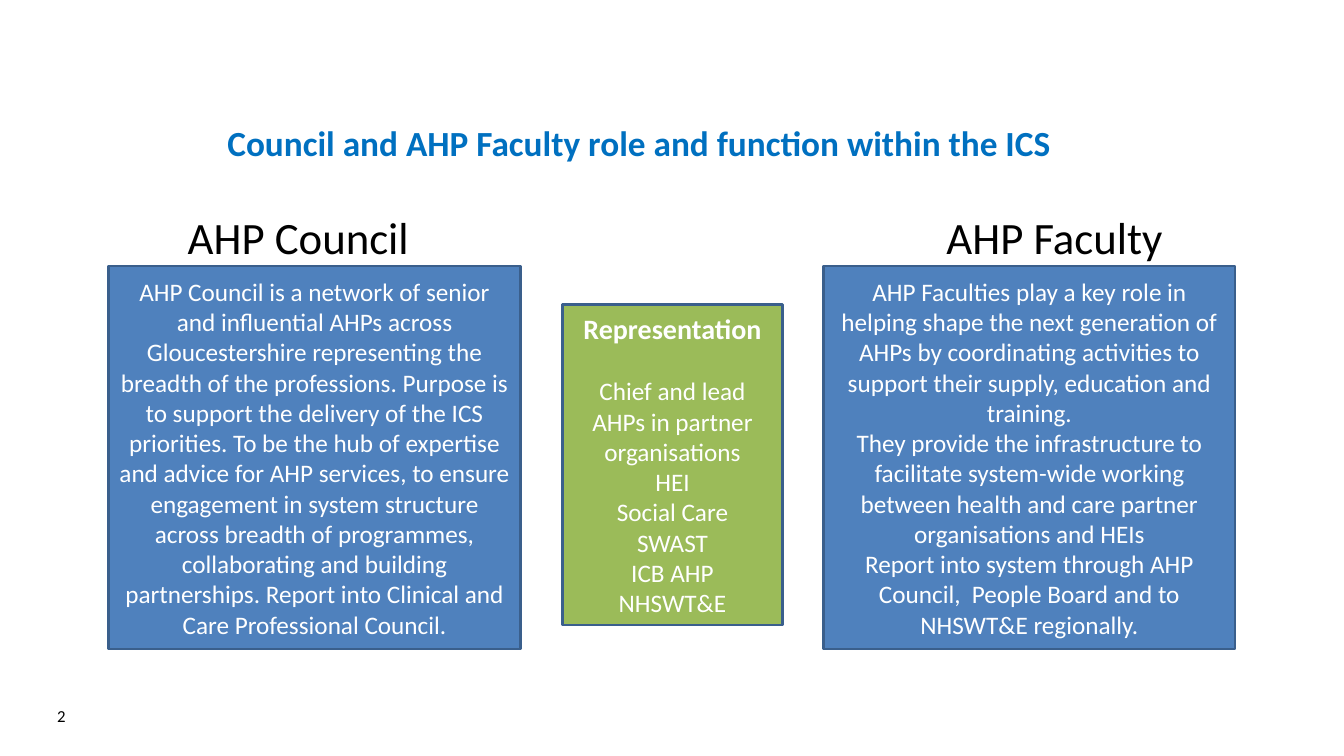
"""Build the slide on the roles of the AHP Council and the AHP Faculty."""
from pptx import Presentation
from pptx import util as u
from pptx.dml import color
from pptx.enum import shapes, text

COLOURS = {"title": "0070C0", "ink": "000000", "white": "FFFFFF",
           "blue": "4F81BD", "green": "9BBB59", "outline": "3A5F8C"}
FONT = "Calibri"
TITLE = "Council and AHP Faculty role and function within the ICS"
HEADINGS = [("AHP Council", 2.96), ("AHP Faculty", 10.46)]
HEADING_WIDTH = 4.08
COUNCIL = [
    "AHP Council is a network of senior and influential AHPs across Gloucestershire "
    "representing the breadth of the professions. Purpose is to support the delivery of "
    "the ICS priorities. To be the hub of expertise and advice for AHP services, to ensure "
    "engagement in system structure across breadth of programmes, collaborating and "
    "building partnerships. Report into Clinical and Care Professional Council.",
]
FACULTY = [
    "AHP Faculties play a key role in helping shape the next generation of AHPs by "
    "coordinating activities to support their supply, education and training.",
    "They provide the infrastructure to facilitate system-wide working between health "
    "and care partner organisations and HEIs",
    "Report into system through AHP Council,  People Board and to NHSWT&E regionally.",
]
REPRESENTATION = ["Representation", "Chief and lead AHPs in partner organisations", "HEI",
                  "Social Care", "SWAST", "ICB AHP", "NHSWT&E"]
PANELS = [
    ((1.08, 2.64, 4.08, 3.8), "blue", COUNCIL),
    ((8.17, 2.64, 4.08, 3.8), "blue", FACULTY),
    ((5.58, 3.02, 2.18, 3.18), "green", REPRESENTATION),
]


def place(shape, left, top, width, height):
    shape.left, shape.top = u.Inches(left), u.Inches(top)
    shape.width, shape.height = u.Inches(width), u.Inches(height)


def style(para, size, colour, align, bold=False):
    para.alignment = align
    para.space_before = u.Pt(0)
    for span in para.runs:
        span.font.name = FONT
        span.font.size = u.Pt(size)
        span.font.bold = bold
        span.font.color.rgb = color.RGBColor.from_string(COLOURS[colour])


def add_title(page):
    box = page.shapes.title
    place(box, 0.68, 1.31, 11.32, 0.64)
    frame = box.text_frame
    frame.text = TITLE
    frame.auto_size = text.MSO_AUTO_SIZE.NONE
    frame.vertical_anchor = text.MSO_ANCHOR.MIDDLE
    frame.margin_bottom = u.Inches(0.49)
    style(frame.paragraphs[0], 25.2, "title", text.PP_ALIGN.CENTER, bold=True)


def add_heading(box, heading, centre):
    place(box, centre - HEADING_WIDTH / 2, 2.03, HEADING_WIDTH, 0.61)
    frame = box.text_frame
    frame.text = heading
    frame.auto_size = text.MSO_AUTO_SIZE.NONE
    para = frame.paragraphs[0]
    props = para._p.get_or_add_pPr()
    props.set("marL", "0")
    props.set("indent", "0")
    props.insert(0, props.makeelement(
        "{http://schemas.openxmlformats.org/drawingml/2006/main}buNone", {}))
    style(para, 32, "ink", text.PP_ALIGN.CENTER)


def add_page_number(page):
    box = page.shapes.add_textbox(*map(u.Inches, (0.16, 6.9, 0.59, 0.4)))
    frame = box.text_frame
    frame.text = "2"
    frame.word_wrap = True
    frame.vertical_anchor = text.MSO_ANCHOR.MIDDLE
    style(frame.paragraphs[0], 12, "ink", text.PP_ALIGN.RIGHT)


def add_panel(page, bounds, fill, lines):
    panel = page.shapes.add_shape(shapes.MSO_SHAPE.RECTANGLE, *map(u.Inches, bounds))
    panel.shadow.inherit = False
    panel.fill.solid()
    panel.fill.fore_color.rgb = color.RGBColor.from_string(COLOURS[fill])
    panel.line.color.rgb = color.RGBColor.from_string(COLOURS["outline"])
    panel.line.width = u.Pt(2)
    frame = panel.text_frame
    frame.text = "\n".join(lines)
    frame.word_wrap = True
    frame.vertical_anchor = text.MSO_ANCHOR.MIDDLE
    for para in frame.paragraphs:
        heading = para.text == REPRESENTATION[0]
        style(para, 20 if heading else 18, "white", text.PP_ALIGN.CENTER, heading)
        if heading:
            para.space_after = u.Pt(21.6)


def main():
    deck = Presentation()
    deck.slide_width, deck.slide_height = u.Inches(13.33), u.Inches(7.5)
    page = deck.slides.add_slide(deck.slide_layouts[3])
    add_title(page)
    for idx, (heading, centre) in enumerate(HEADINGS, start=1):
        add_heading(page.placeholders[idx], heading, centre)
    add_page_number(page)
    for bounds, fill, lines in PANELS:
        add_panel(page, bounds, fill, lines)
    deck.save("out.pptx")


if __name__ == "__main__":
    main()
